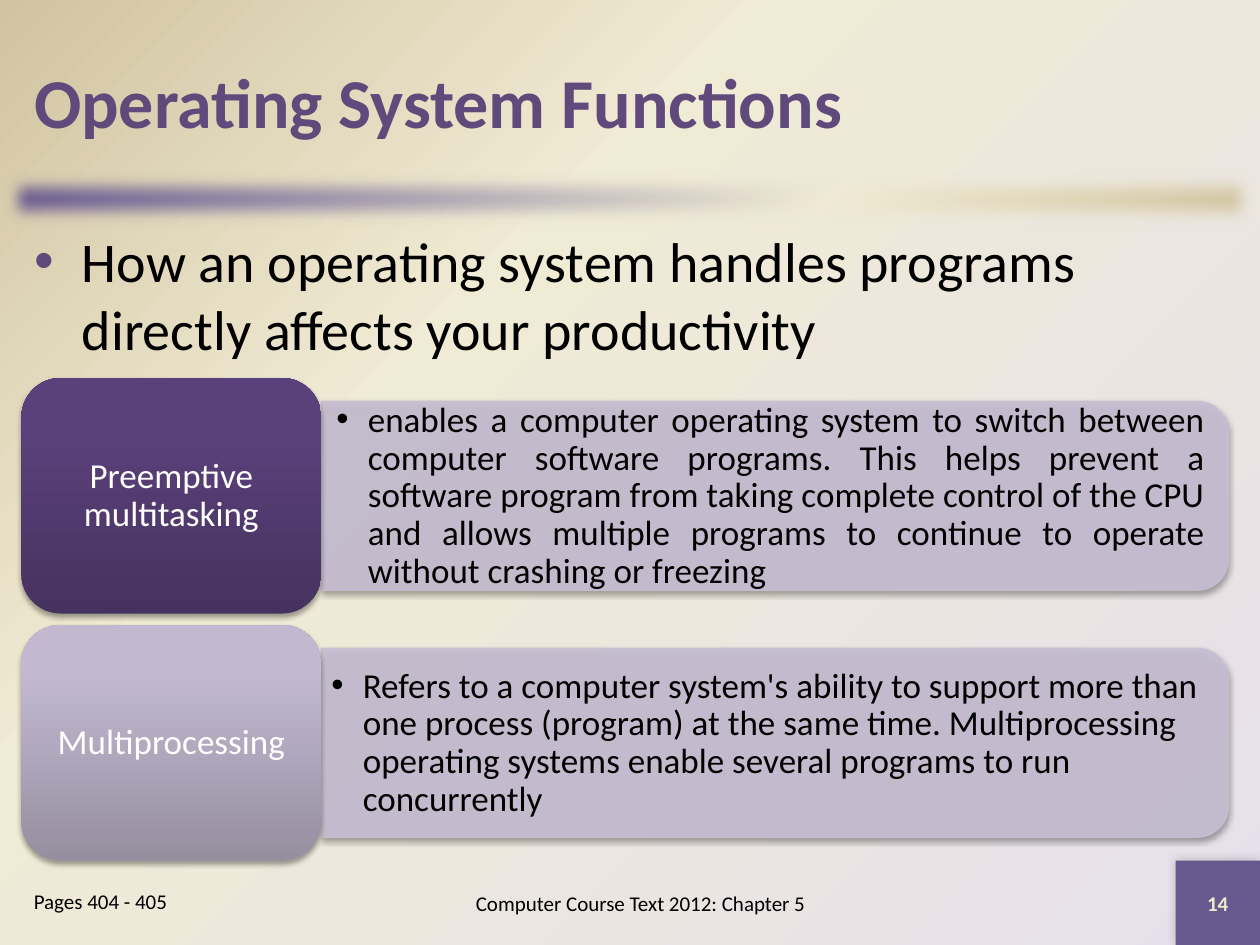
from lxml.etree import SubElement
from pptx import Presentation
from pptx.dml.color import RGBColor
from pptx.enum.shapes import MSO_SHAPE as Shape
from pptx.enum.text import MSO_ANCHOR as Anchor, MSO_AUTO_SIZE as AutoSize, PP_ALIGN as Align
from pptx.oxml.ns import qn
from pptx.util import Inches, Pt

FONT = "Calibri"
BLACK = RGBColor(0x00, 0x00, 0x00)
WHITE = RGBColor(0xFF, 0xFF, 0xFF)
PURPLE = RGBColor(0x60, 0x4A, 0x7B)
BADGE = RGBColor(0x67, 0x58, 0x8E)
BADGE_TEXT = RGBColor(0xEE, 0xEB, 0xCA)
PANEL = RGBColor(0xC7, 0xBF, 0xD3)
LAVENDER = RGBColor(0xE6, 0xE0, 0xEC)
CREAM = RGBColor(0xF0, 0xEB, 0xD5)
TAN = RGBColor(0xD1, 0xC3, 0x9F)
DEEP_STOPS = [(0, RGBColor(0x46, 0x32, 0x5F)), (80, RGBColor(0x5B, 0x41, 0x7B)),
              (100, RGBColor(0x5B, 0x40, 0x7C))]
PALE_STOPS = [(0, RGBColor(0x96, 0x8F, 0xA0)), (80, RGBColor(0xC2, 0xB9, 0xD0)),
              (100, RGBColor(0xC3, 0xBA, 0xD1))]

TITLE = "Operating System Functions"
INTRO = "How an operating system handles programs directly affects your productivity"
# term, definition, label gradient, definition alignment, definition side inset
TERMS = [
    ("Preemptive multitasking",
     "enables a computer operating system to switch between computer software programs. "
     "This helps prevent a software program from taking complete control of the CPU and "
     "allows multiple programs to continue to operate without crashing or freezing",
     DEEP_STOPS, Align.JUSTIFY, 0.12),
    ("Multiprocessing",
     "Refers to a computer system's ability to support more than one process (program) at "
     "the same time. Multiprocessing operating systems enable several programs to run "
     "concurrently",
     PALE_STOPS, Align.LEFT, 0.08),
]
PAGES = "Pages 404 - 405"
FOOTER = "Computer Course Text 2012: Chapter 5"
NUMBER = "14"

MARGIN = 0.17
ROW_TOP, ROW_PITCH = 3, 1.96
LABEL_W, LABEL_H = 2.38, 1.87
PANEL_W, PANEL_H = 7.2, 1.5
BADGE_BOX = (9.33, 6.83, 0.67, 0.67)


def child(parent, tag, **attributes):
    return SubElement(parent, qn(tag), {k: str(v) for k, v in attributes.items()})


def set_gradient(fill, properties, stops, angle=None):
    """Linear at the angle, or circular from the lower right corner without one."""
    fill.solid()
    solid = properties.find(qn("a:solidFill"))
    gradient = child(properties, "a:gradFill", rotWithShape=1)
    properties.replace(solid, gradient)
    stop_list = child(gradient, "a:gsLst")
    for position, color in stops:
        stop = child(stop_list, "a:gs", pos=position * 1000)
        child(stop, "a:srgbClr", val=color)
    if angle is None:
        circle = child(gradient, "a:path", path="circle")
        child(circle, "a:fillToRect", l=100000, t=100000)
    else:
        child(gradient, "a:lin", ang=angle * 60000, scaled=0)


def add_shadow(shape, opacity, blur, distance, direction):
    effects = shape._element.spPr.find(qn("a:effectLst"))
    shadow = child(effects, "a:outerShdw", blurRad=Pt(blur), dist=Pt(distance),
                   dir=direction * 60000, algn="ctr", rotWithShape=0)
    child(child(shadow, "a:srgbClr", val=BLACK), "a:alpha", val=opacity * 1000)


def add_block(slide, kind, box):
    block = slide.shapes.add_shape(kind, *map(Inches, box))
    block.shadow.inherit = False
    block.line.fill.background()
    return block


def set_text(frame, text, size, color=BLACK, bold=False, align=Align.LEFT,
             anchor=Anchor.TOP, insets=(0.1, 0.05)):
    frame.word_wrap = True
    frame.auto_size = AutoSize.NONE
    frame.vertical_anchor = anchor
    frame.margin_left = frame.margin_right = Inches(insets[0])
    frame.margin_top = frame.margin_bottom = Inches(insets[1])
    frame.text = text
    paragraph = frame.paragraphs[0]
    paragraph.alignment = align
    font = paragraph.font
    font.name, font.size, font.bold = FONT, Pt(size), bold
    font.color.rgb = color
    return paragraph


def add_text(slide, box, text, size, **style):
    frame = slide.shapes.add_textbox(*map(Inches, box)).text_frame
    return set_text(frame, text, size, **style)


def add_bullet(paragraph, indent, color):
    properties = paragraph._p.get_or_add_pPr()
    properties.set("marL", str(Inches(indent)))
    properties.set("indent", str(-Inches(indent)))
    child(child(properties, "a:buClr"), "a:srgbClr", val=color)
    child(properties, "a:buFont", typeface="Arial")
    child(properties, "a:buChar", char="•")
    # The schema wants the default run properties after the bullet.
    properties.append(properties.find(qn("a:defRPr")))


def fill_placeholder(placeholder, box, text, size, **style):
    placeholder.left, placeholder.top, placeholder.width, placeholder.height = map(Inches, box)
    return set_text(placeholder.text_frame, text, size, **style)


def add_term(slide, top, term, definition, stops, align, inset):
    middle = top + LABEL_H / 2
    panel_left = MARGIN + LABEL_W
    # The panel stands upright and is turned so its round corners face right.
    panel = add_block(slide, Shape.ROUND_2_SAME_RECTANGLE,
                      (panel_left + (PANEL_W - PANEL_H) / 2, middle - PANEL_W / 2,
                       PANEL_H, PANEL_W))
    panel.rotation = 90
    for fill in (panel.fill, panel.line.fill):
        fill.solid()
        fill.fore_color.rgb = PANEL
    panel.line.width = Pt(0.75)
    for color in panel._element.spPr.iter(qn("a:srgbClr")):
        child(color, "a:alpha", val=90000)
    add_shadow(panel, 35, 3.1, 1.8, 90)

    paragraph = add_text(slide, (panel_left, middle - 0.67, PANEL_W - 0.07, 1.35),
                         definition, 20, align=align, anchor=Anchor.MIDDLE,
                         insets=(inset, inset / 2))
    paragraph.line_spacing = 0.9
    add_bullet(paragraph, 0.25, BLACK)

    label = add_block(slide, Shape.ROUNDED_RECTANGLE, (MARGIN, top, LABEL_W, LABEL_H))
    set_gradient(label.fill, label._element.spPr, stops, 270)
    add_shadow(label, 35, 3.1, 1.8, 90)
    set_text(label.text_frame, term, 20, color=WHITE, align=Align.CENTER,
             anchor=Anchor.MIDDLE, insets=(0.08, 0.04)).line_spacing = 0.9


def main():
    deck = Presentation()
    deck.slide_width, deck.slide_height = Inches(10), Inches(7.5)
    slide = deck.slides.add_slide(deck.slide_layouts[1])

    background = slide.background.fill
    background.solid()
    set_gradient(background, slide._element.find(".//" + qn("p:bgPr")),
                 [(0, LAVENDER), (65, CREAM), (100, TAN)])

    title, body = slide.placeholders
    fill_placeholder(title, (MARGIN, 0.17, 9.67, 1.25), TITLE, 40, color=PURPLE,
                     bold=True, anchor=Anchor.MIDDLE)
    intro = fill_placeholder(body, (MARGIN, 1.75, 9.67, 5.08), INTRO, 32)
    add_bullet(intro, 0.38, PURPLE)

    divider = add_block(slide, Shape.RECTANGLE, (0, 1.33, 10, 0.5))
    set_gradient(divider.fill, divider._element.spPr,
                 [(0, BADGE), (65, CREAM), (100, TAN)], 45)
    child(divider._element.spPr.find(qn("a:effectLst")), "a:softEdge", rad=Pt(10))

    for row, term in enumerate(TERMS):
        add_term(slide, ROW_TOP + row * ROW_PITCH, *term)

    badge = add_block(slide, Shape.RECTANGLE, BADGE_BOX)
    badge.fill.solid()
    badge.fill.fore_color.rgb = BADGE
    add_shadow(badge, 20, 6, 0, 225)
    set_text(badge.text_frame, NUMBER, 12, color=BADGE_TEXT, bold=True,
             align=Align.CENTER, anchor=Anchor.MIDDLE)
    add_text(slide, (3, 6.92, 4.17, 0.5), FOOTER, 12, align=Align.CENTER,
             anchor=Anchor.MIDDLE)
    add_text(slide, (MARGIN, 7, 1.83, 0.5), PAGES, 12)

    deck.save("out.pptx")


if __name__ == "__main__":
    main()
